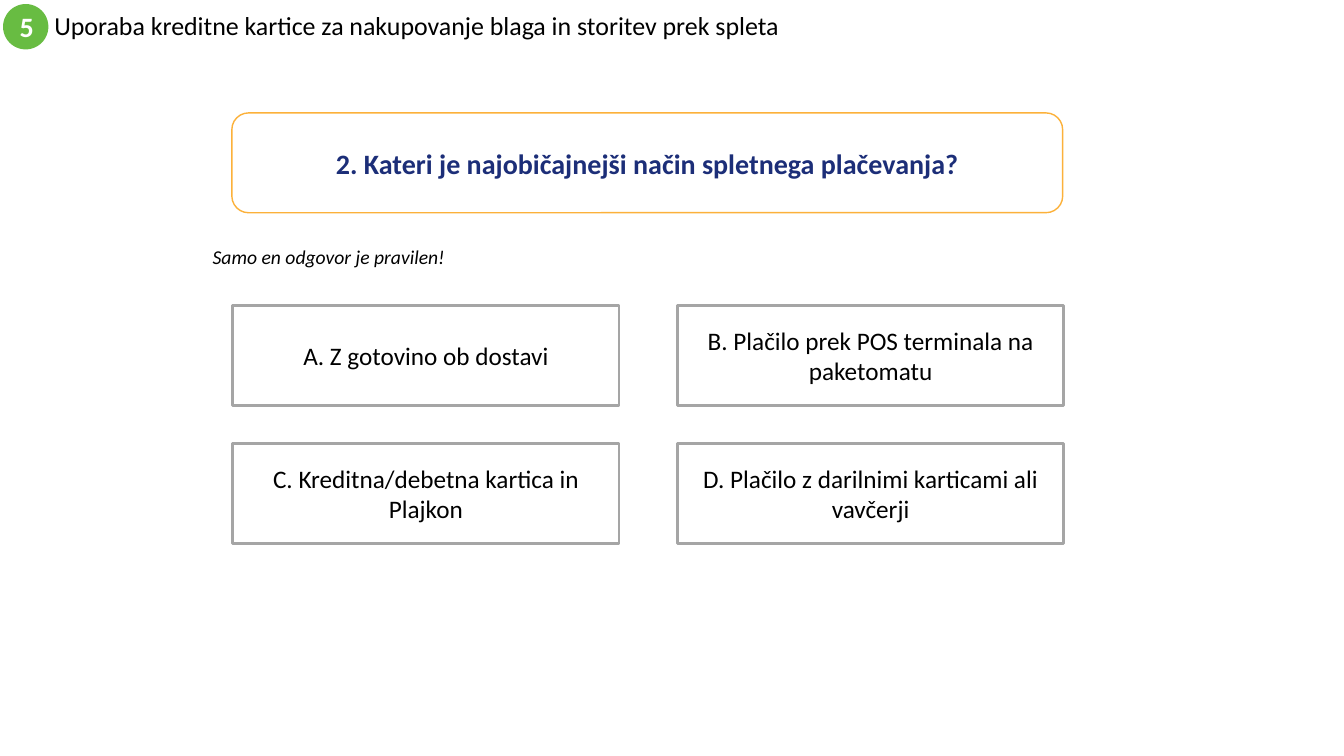
"""Build the quiz slide on the usual way of paying online."""
from pptx import Presentation
from pptx.dml.color import RGBColor
from pptx.enum import shapes, text
from pptx.util import Inches, Pt

deck = Presentation()
deck.slide_width, deck.slide_height = Inches(13.33), Inches(7.5)
slide = deck.slides.add_slide(deck.slide_layouts[6])
kind = shapes.MSO_SHAPE


def write(box, words, size, color="000000", align=text.PP_ALIGN.CENTER):
    frame = box.text_frame
    frame.word_wrap = True
    frame.vertical_anchor = text.MSO_ANCHOR.MIDDLE
    frame.text = words
    para = frame.paragraphs[0]
    para.alignment = align
    font = para.runs[0].font
    font.name, font.size = "Calibri", Pt(size)
    font.color.rgb = RGBColor.from_string(color)
    return para


def draw(form, place, fill, line=None, width=1):
    shape = slide.shapes.add_shape(form, *map(Inches, place))
    shape.shadow.inherit = False
    shape.fill.solid()
    shape.fill.fore_color.rgb = RGBColor.from_string(fill)
    if line:
        shape.line.color.rgb = RGBColor.from_string(line)
        shape.line.width = Pt(width)
    else:
        shape.line.fill.background()
    return shape


left = text.PP_ALIGN.LEFT
title = slide.shapes.add_textbox(*map(Inches, (0.44, 0.04, 8, 0.45)))
para = write(title, "Uporaba kreditne kartice za nakupovanje blaga in storitev prek spleta",
             18.5, align=left)
para.line_spacing = 0.9

badge = draw(kind.OVAL, (0.03, 0.04, 0.45, 0.45), "68BC42")
write(badge, "5", 20, "FFFFFF").runs[0].font.bold = True

ask = draw(kind.ROUNDED_RECTANGLE, (2.3, 1.12, 8.24, 0.99), "FFFFFF", "FCB13A")
para = write(ask, "2. Kateri je najobičajnejši način spletnega plačevanja?", 20, "1C2E78")
para.runs[0].font.bold = True

hint = slide.shapes.add_textbox(*map(Inches, (2.01, 2.38, 2.65, 0.57)))
write(hint, "Samo en odgovor je pravilen!", 14, align=left).runs[0].font.italic = True
hint.text_frame.vertical_anchor = text.MSO_ANCHOR.TOP

answers = [
    "A. Z gotovino ob dostavi",
    "B. Plačilo prek POS terminala na paketomatu",
    "C. Kreditna/debetna kartica in Plajkon",
    "D. Plačilo z darilnimi karticami ali vavčerji",
]
for i, words in enumerate(answers):
    row, col = divmod(i, 2)
    place = (2.31 + 4.41 * col, 3.03 + 1.37 * row, 3.83, 0.99)
    write(draw(kind.RECTANGLE, place, "FFFFFF", "A5A5A5", 2), words, 18)

deck.save("out.pptx")
